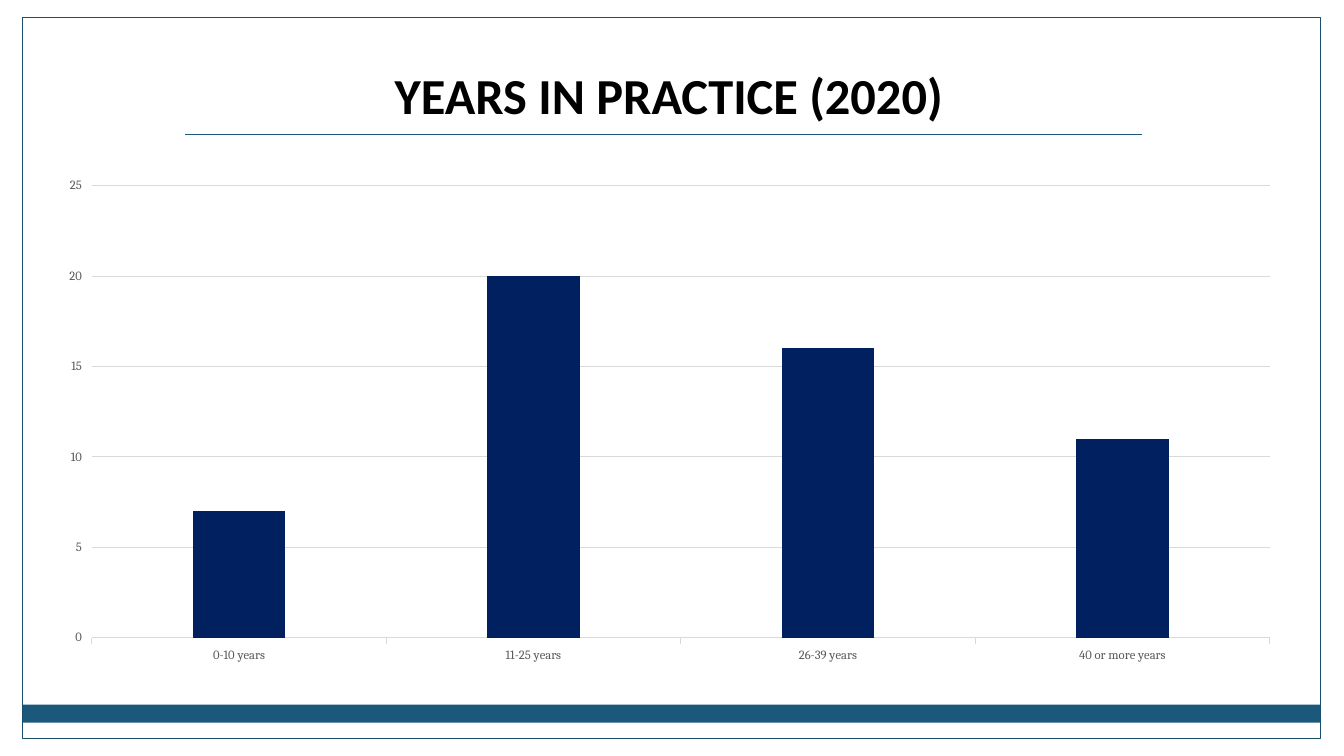
"""Build the years-in-practice column chart slide."""
from lxml import etree
from pptx import Presentation
from pptx import util as u
from pptx.chart.data import CategoryChartData
from pptx.dml.color import RGBColor
from pptx.enum import chart as ch, shapes, text
from pptx.oxml.ns import qn

COLORS = {"band": "1B587C", "frame": "184E6D", "bar": "002060",
          "grid": "D9D9D9", "label": "595959", "title": "000000"}
YEARS = {"0-10 years": 7, "11-25 years": 20, "26-39 years": 16, "40 or more years": 11}


def rgb(name):
    return RGBColor.from_string(COLORS[name])


def set_line(line, name):
    line.color.rgb = rgb(name)
    line.width = u.Pt(0.75)


prs = Presentation()
prs.slide_width, prs.slide_height = u.Inches(13.33), u.Inches(7.5)
s = prs.slides.add_slide(prs.slide_layouts[5])

left, width = u.Inches(0.22), u.Inches(12.88)
band = s.shapes.add_shape(shapes.MSO_SHAPE.RECTANGLE, left, u.Inches(6.99), width, u.Inches(0.18))
band.fill.solid()
band.fill.fore_color.rgb = rgb("band")
band.line.fill.background()
frame = s.shapes.add_shape(shapes.MSO_SHAPE.RECTANGLE, left, u.Inches(0.17), width, u.Inches(7.16))
frame.fill.background()
set_line(frame.line, "frame")
for sp in (band, frame):
    sp.shadow.inherit = False

title = s.shapes.title
title.left, title.top = u.Inches(0.97), u.Inches(0.37)
title.width, title.height = u.Inches(11.33), u.Inches(0.92)
tf = title.text_frame
tf.text = "YEARS IN PRACTICE (2020)"
tf.auto_size = text.MSO_AUTO_SIZE.NONE
tf.vertical_anchor = text.MSO_ANCHOR.BOTTOM
p = tf.paragraphs[0]
p.alignment = text.PP_ALIGN.CENTER
p.font.name, p.font.size, p.font.bold = "Calibri", u.Pt(36), True
p.font.color.rgb = rgb("title")

data = CategoryChartData()
data.categories = list(YEARS)
data.add_series("Series 1", list(YEARS.values()))
chart = s.shapes.add_chart(ch.XL_CHART_TYPE.COLUMN_CLUSTERED, u.Inches(0.44), u.Inches(1.67),
                           u.Inches(12.4), u.Inches(5), data).chart
chart.has_legend = chart.has_title = False
chart.font.name, chart.font.size = "Cambria", u.Pt(10)
chart.font.color.rgb = rgb("title")

plot = chart.plots[0]
plot.gap_width, plot.overlap, plot.vary_by_categories = 219, -27, False
fill = plot.series[0].format.fill
fill.solid()
fill.fore_color.rgb = rgb("bar")

for axis in (chart.category_axis, chart.value_axis):
    axis.major_tick_mark = ch.XL_TICK_MARK.OUTSIDE
    font = axis.tick_labels.font
    font.name, font.size = "Cambria", u.Pt(9)
    font.color.rgb = rgb("label")
set_line(chart.category_axis.format.line, "grid")
value_axis = chart.value_axis
value_axis.minimum_scale, value_axis.maximum_scale, value_axis.major_unit = 0, 25, 5
value_axis.format.line.fill.background()
set_line(value_axis.major_gridlines.format.line, "grid")

rule = s.shapes.add_connector(shapes.MSO_CONNECTOR.STRAIGHT, u.Inches(1.83), u.Inches(1.33),
                              u.Inches(11.33), u.Inches(1.33))
set_line(rule.line, "band")
etree.SubElement(rule._element.spPr, qn("a:effectLst"))

prs.save("out.pptx")
